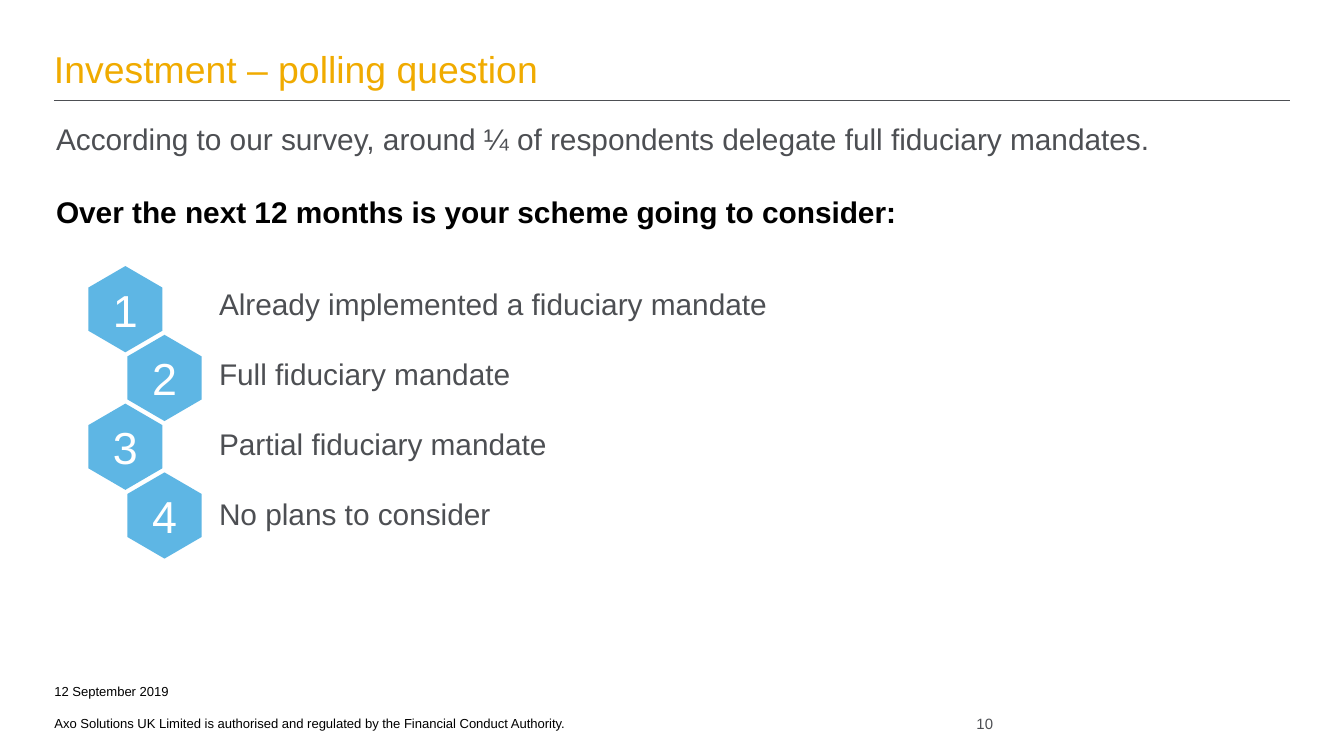
import pptx
import pptx.util
import pptx.dml.color
import pptx.enum.shapes
import pptx.enum.text
import pptx.oxml
import pptx.oxml.ns

Cm = pptx.util.Cm
Pt = pptx.util.Pt
ALIGN = pptx.enum.text.PP_ALIGN
ANCHOR = pptx.enum.text.MSO_ANCHOR

COLORS = {"gold": "F0AB00", "grey": "4D4F53", "blue": "5EB6E4",
          "black": "000000", "white": "FFFFFF"}
HEXAGON = [(0, 0.75), (0.5, 1), (1, 0.75), (1, 0.25), (0.5, 0), (0, 0.25)]
OPTIONS = ["Already implemented a fiduciary mandate", "Full fiduciary mandate",
           "Partial fiduciary mandate", "No plans to consider"]


def rgb(name):
    return pptx.dml.color.RGBColor.from_string(COLORS[name])


def write(p, text, size=16, color="grey", bold=False, align=ALIGN.LEFT,
          before=0, spacing=None):
    p.alignment = align
    p.space_before = Pt(before)
    p.line_spacing = spacing
    r = p.add_run()
    r.text = text
    r.font.name = "Arial"
    r.font.size = Pt(size)
    r.font.bold = bold
    r.font.color.rgb = rgb(color)


class Deck:
    def __init__(self, width, height):
        self.prs = pptx.Presentation()
        self.prs.slide_width = Cm(width)
        self.prs.slide_height = Cm(height)
        self.s = self.prs.slides.add_slide(self.prs.slide_layouts[5])

    def frame(self, sp, anchor, inset=True, wrap=True):
        tf = sp.text_frame
        tf.auto_size = pptx.enum.text.MSO_AUTO_SIZE.NONE
        tf.word_wrap = wrap
        tf.vertical_anchor = anchor
        if not inset:
            tf.margin_left = tf.margin_right = tf.margin_top = tf.margin_bottom = 0
        return tf

    def title(self, text, left, top, width, height):
        sp = self.s.shapes.title
        sp.left, sp.top, sp.width, sp.height = map(Cm, (left, top, width, height))
        tf = self.frame(sp, ANCHOR.BOTTOM, inset=False)
        write(tf.paragraphs[0], text, size=20, color="gold", spacing=0.9)

    def text(self, paragraphs, left, top, width, height, anchor=ANCHOR.TOP,
             inset=False, wrap=True):
        sp = self.s.shapes.add_textbox(*map(Cm, (left, top, width, height)))
        tf = self.frame(sp, anchor, inset, wrap)
        for i, (text, style) in enumerate(paragraphs):
            p = tf.add_paragraph() if i else tf.paragraphs[0]
            write(p, text, **style)

    def rule(self, x1, x2, y):
        sp = self.s.shapes.add_connector(
            pptx.enum.shapes.MSO_CONNECTOR.STRAIGHT, Cm(x1), Cm(y), Cm(x2), Cm(y))
        sp.line.color.rgb = rgb("grey")
        sp.line.width = Pt(0.75)
        sp._element.spPr.append(pptx.oxml.parse_xml(
            "<a:effectLst %s/>" % pptx.oxml.ns.nsdecls("a")))

    def hexagon(self, text, left, top, width, height):
        points = [(Cm(left + x * width), Cm(top + y * height)) for x, y in HEXAGON]
        builder = self.s.shapes.build_freeform(*points[0])
        builder.add_line_segments(points[1:], close=True)
        sp = builder.convert_to_shape()
        sp.shadow.inherit = False
        sp.fill.solid()
        sp.fill.fore_color.rgb = rgb("blue")
        sp.line.fill.background()
        tf = self.frame(sp, ANCHOR.MIDDLE)
        write(tf.paragraphs[0], text, size=24, color="white", align=ALIGN.CENTER)


def main():
    deck = Deck(25.4, 14.29)
    deck.title("Investment – polling question", 1.02, 0.64, 23.36, 1.09)
    deck.rule(1.02, 24.38, 1.9)
    deck.text([
        ("According to our survey, around ¼ of respondents delegate full "
         "fiduciary mandates.", {}),
        ("Over the next 12 months is your scheme going to consider:",
         {"color": "black", "bold": True, "before": 19.5}),
    ], 1.06, 2.29, 21.1, 2.06)

    for i, option in enumerate(OPTIONS):
        deck.hexagon(str(i + 1), 1.67 + 0.74 * (i % 2), 5.03 + 1.3 * i, 1.4, 1.63)
        deck.text([(option, {})], 3.89, 5.28 + 1.32 * i, 19.69, 0.94, inset=True)

    small = {"size": 7, "color": "black"}
    deck.text([
        ("12 September 2019", small),
        ("Axo Solutions UK Limited is authorised and regulated by the "
         "Financial Conduct Authority.", {**small, "before": 8.5}),
    ], 1.03, 12.62, 16.76, 1.2, anchor=ANCHOR.BOTTOM)
    deck.text([("10", {"size": 8, "align": ALIGN.RIGHT})],
              17.78, 13.51, 0.99, 0.33, anchor=ANCHOR.BOTTOM)
    deck.prs.save("out.pptx")


if __name__ == "__main__":
    main()
